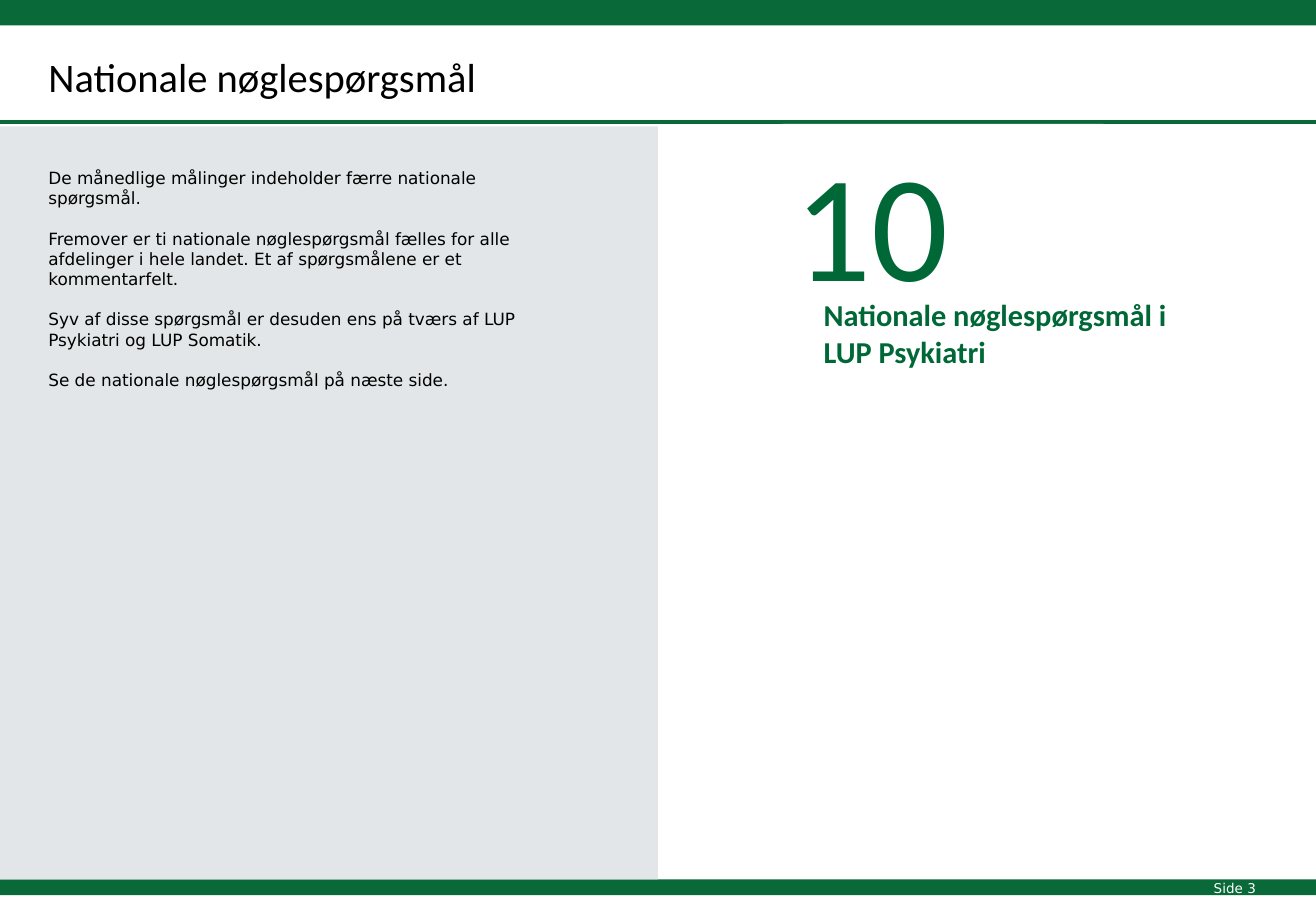
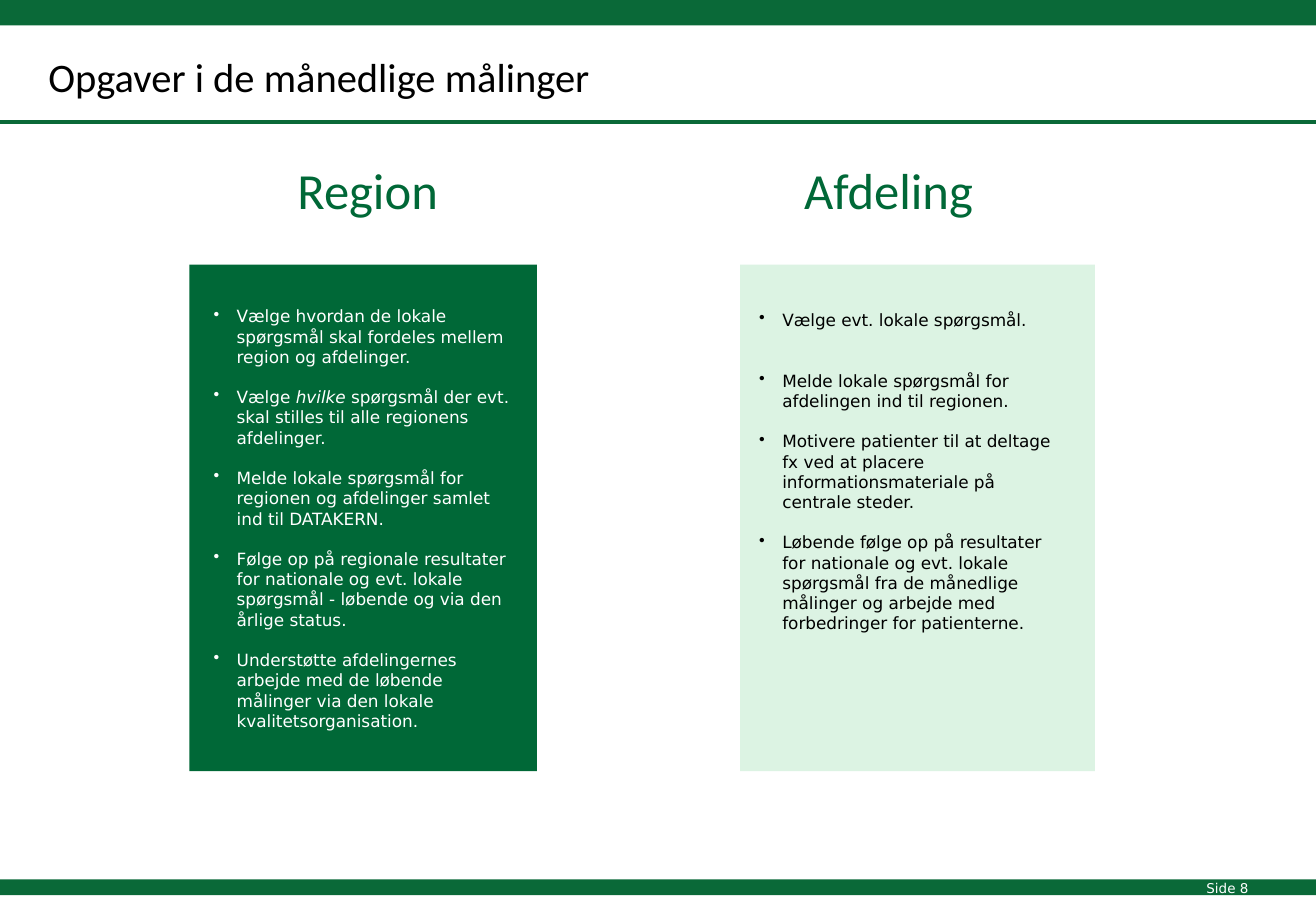
from lxml.etree import SubElement
from pptx import Presentation
from pptx.dml.color import RGBColor
from pptx.enum.shapes import MSO_SHAPE
from pptx.enum.text import MSO_ANCHOR, PP_ALIGN
from pptx.oxml.ns import qn
from pptx.util import Inches, Pt

WIDTH, HEIGHT = 10.83, 7.5
COLORS = {
    "band": "0A6938",
    "accent": "006837",
    "grey": "E3E6E8",
    "mint": "DCF3E3",
    "text": "000000",
    "white": "FFFFFF",
}
HEADING, BODY = "Calibri", "DejaVu Sans"
BODY_SIZE, LINE, INDENT = 10, 12, 0.19

INTRO = [
    "De månedlige målinger indeholder færre nationale spørgsmål.",
    "Fremover er ti nationale nøglespørgsmål fælles for alle afdelinger i hele landet. "
    "Et af spørgsmålene er et kommentarfelt.",
    "Syv af disse spørgsmål er desuden ens på tværs af LUP Psykiatri og LUP Somatik.",
    "Se de nationale nøglespørgsmål på næste side.",
]
REGION_TASKS = [
    "Vælge hvordan de lokale spørgsmål skal fordeles mellem region og afdelinger.",
    ("Vælge ", "hvilke", " spørgsmål der evt. skal stilles til alle regionens afdelinger."),
    "Melde lokale spørgsmål for regionen og afdelinger samlet ind til DATAKERN.",
    "Følge op på regionale resultater for nationale og evt. lokale spørgsmål - løbende "
    "og via den årlige status.",
    "Understøtte afdelingernes arbejde med de løbende målinger via den lokale "
    "kvalitetsorganisation.",
]
DEPARTMENT_TASKS = [
    "Vælge evt. lokale spørgsmål.",
    "Melde lokale spørgsmål for afdelingen ind til regionen.",
    "Motivere patienter til at deltage fx ved at placere informationsmateriale på "
    "centrale steder.",
    "Løbende følge op på resultater for nationale og evt. lokale spørgsmål fra de "
    "månedlige målinger og arbejde med forbedringer for patienterne.",
]


def add_block(slide, left, top, width, height, color):
    block = slide.shapes.add_shape(
        MSO_SHAPE.RECTANGLE, Inches(left), Inches(top), Inches(width), Inches(height))
    block.shadow.inherit = False
    block.fill.solid()
    block.fill.fore_color.rgb = RGBColor.from_string(COLORS[color])
    block.line.fill.background()
    return block


def set_font(paragraph, name, size, color, bold=False):
    paragraph.font.name = name
    paragraph.font.size = Pt(size)
    paragraph.font.bold = bold
    paragraph.font.color.rgb = RGBColor.from_string(COLORS[color])


def add_text(slide, left, top, width, height, wrap=True):
    frame = slide.shapes.add_textbox(
        Inches(left), Inches(top), Inches(width), Inches(height)).text_frame
    frame.word_wrap = wrap
    return frame


def write_lines(frame, lines, size, color, name=HEADING, bold=False):
    for index, line in enumerate(lines):
        paragraph = frame.add_paragraph() if index else frame.paragraphs[0]
        paragraph.alignment = PP_ALIGN.LEFT
        paragraph.add_run().text = line
        set_font(paragraph, name, size, color, bold)


def add_bullet(paragraph):
    properties = paragraph._p.get_or_add_pPr()
    properties.set("marL", str(Inches(INDENT)))
    properties.set("indent", str(-Inches(INDENT)))
    SubElement(properties, qn("a:buChar")).set("char", "•")


def write_body(frame, items, color, bulleted=False, wide_gaps=()):
    """Write spaced paragraphs; a tuple item holds plain, italic and plain text."""
    for index, item in enumerate(items):
        paragraph = frame.add_paragraph() if index else frame.paragraphs[0]
        if bulleted:
            add_bullet(paragraph)
        paragraph.line_spacing = Pt(LINE)
        if index:
            paragraph.space_before = Pt(LINE * (2 if index in wide_gaps else 1))
        parts = (item,) if isinstance(item, str) else item
        for position, part in enumerate(parts):
            run = paragraph.add_run()
            run.text = part
            if position == 1:
                run.font.italic = True
        set_font(paragraph, BODY, BODY_SIZE, color)


def add_framed_slide(deck, title, page, page_left):
    """Add a slide with the shared bands, title and page number."""
    slide = deck.slides.add_slide(deck.slide_layouts[6])
    for top, height in ((7.24, 0.13), (0, 0.21), (0.99, 0.03)):
        add_block(slide, 0, top, WIDTH, height, "band")
    write_lines(add_text(slide, 0.3, 0.38, 6.93, 0.5), [title], 24, "text")
    write_lines(add_text(slide, page_left, 7.2, 0.56, 0.24, wrap=False),
                [f"Side {page}"], 8, "white", BODY)
    return slide


def build_key_questions(deck):
    slide = add_framed_slide(deck, "Nationale nøglespørgsmål", 3, 9.89)
    add_block(slide, 0, 1.04, WIDTH / 2, 6.2, "grey")
    write_body(add_text(slide, 0.3, 1.33, 4.28, 1.95), INTRO, "text")
    count = add_block(slide, 6.44, 1.02, 2.64, 1.62, "white").text_frame
    count.vertical_anchor = MSO_ANCHOR.TOP
    write_lines(count, ["10"], 90, "accent")
    write_lines(add_text(slide, 6.68, 2.39, 4.15, 0.71),
                ["Nationale nøglespørgsmål i", "LUP Psykiatri"], 18, "accent", bold=True)


def build_tasks(deck):
    slide = add_framed_slide(deck, "Opgaver i de månedlige målinger", 8, 9.83)
    add_block(slide, 1.56, 2.18, 2.86, 4.17, "accent")
    add_block(slide, 6.09, 2.18, 2.92, 4.17, "mint")
    for heading, left in (("Region", 2.35), ("Afdeling", 6.52)):
        write_lines(add_text(slide, left, 1.26, 2.84, 0.61), [heading], 30, "accent")
    write_body(add_text(slide, 1.66, 2.47, 2.66, 3.97), REGION_TASKS, "white", bulleted=True)
    write_body(add_text(slide, 6.15, 2.5, 2.6, 3.14), DEPARTMENT_TASKS, "text",
               bulleted=True, wide_gaps=(1,))


def main():
    deck = Presentation()
    deck.slide_width, deck.slide_height = Inches(WIDTH), Inches(HEIGHT)
    build_key_questions(deck)
    build_tasks(deck)
    deck.save("out.pptx")


if __name__ == "__main__":
    main()
